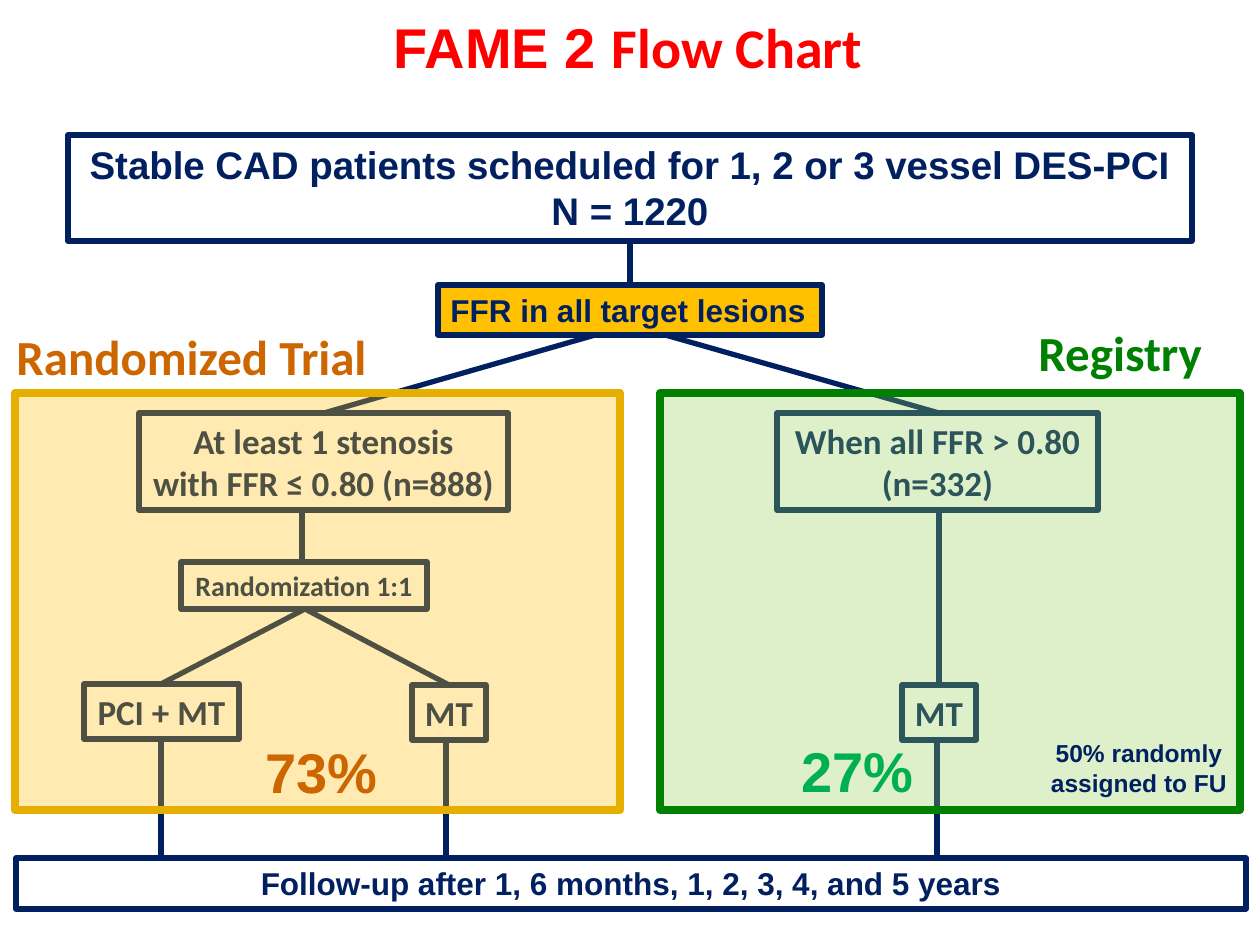
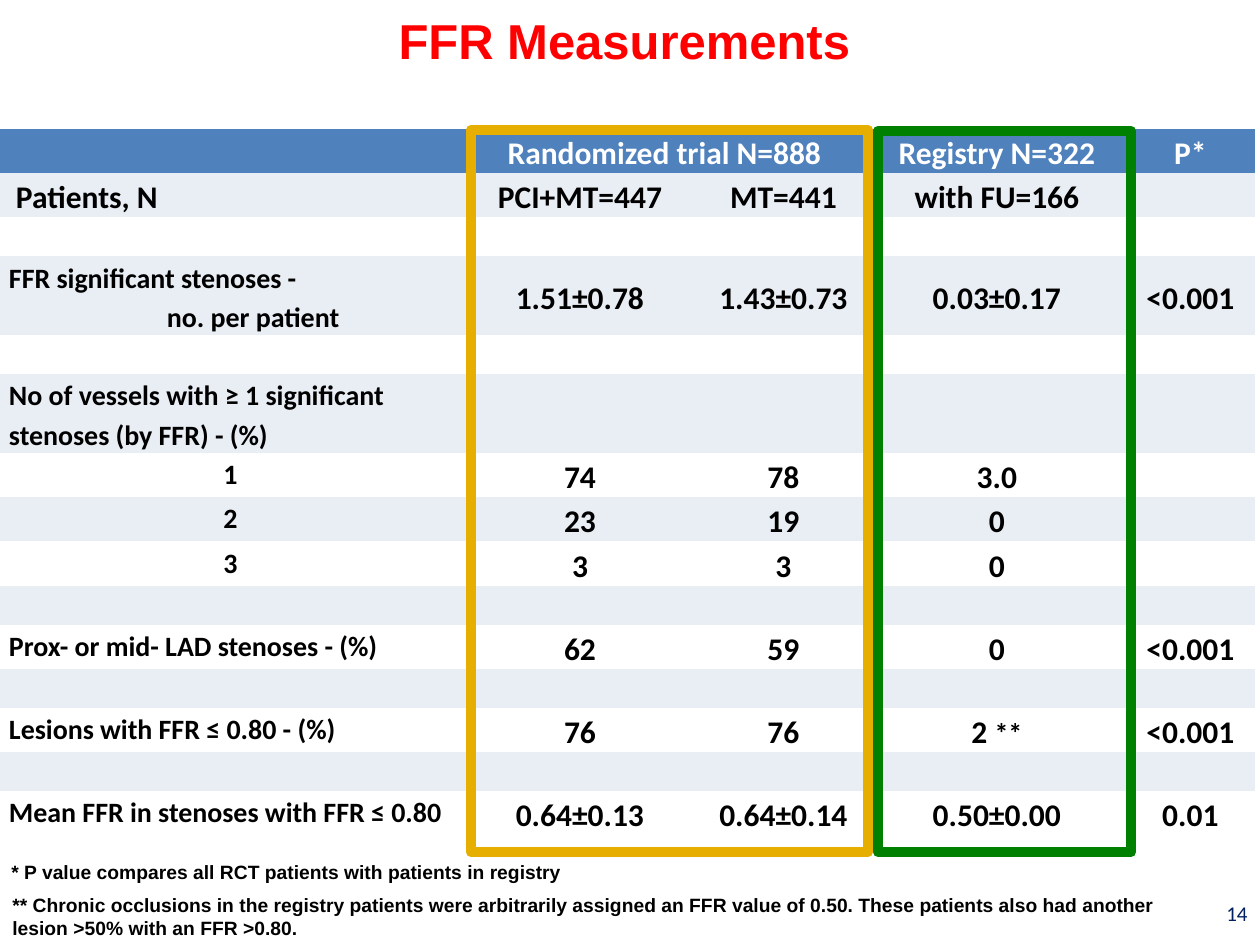
from lxml import etree
from pptx import Presentation
from pptx import util as u
from pptx.dml.color import RGBColor
from pptx.enum import shapes, text
from pptx.oxml.ns import qn

PX = 914400 / 126
NAVY = RGBColor(0x00, 0x20, 0x60)
RED = RGBColor(0xFF, 0x00, 0x00)
AMBER = RGBColor(0xFF, 0xC0, 0x00)
GOLD = RGBColor(0xE6, 0xAF, 0x00)
ORANGE = RGBColor(0xCC, 0x66, 0x00)
GREEN = RGBColor(0x00, 0x80, 0x00)
LIME = RGBColor(0x92, 0xD0, 0x50)
EMERALD = RGBColor(0x00, 0xB0, 0x50)
BLUE = RGBColor(0x4F, 0x81, 0xBD)
PALE = RGBColor(0xE9, 0xED, 0xF4)
WHITE = RGBColor(0xFF, 0xFF, 0xFF)
BLACK = RGBColor(0x00, 0x00, 0x00)
LEFT, CENTER, RIGHT = text.PP_ALIGN.LEFT, text.PP_ALIGN.CENTER, text.PP_ALIGN.RIGHT
TOP, MIDDLE = text.MSO_ANCHOR.TOP, text.MSO_ANCHOR.MIDDLE


def write(frame, words, size=18, color=NAVY, font="Arial", bold=True, align=LEFT, spacing=1.0):
    for number, line in enumerate(words.split("\n")):
        para = frame.add_paragraph() if number else frame.paragraphs[0]
        para.alignment = align
        para.line_spacing = spacing
        span = para.add_run()
        span.text = line
        span.font.name = font
        span.font.size = u.Pt(size)
        span.font.bold = bold
        span.font.color.rgb = color
    return para


def add_box(page, at, words="", line=None, weight=3, fill=None, opacity=None,
            wrap=False, anchor=TOP, **style):
    place = [round(value * PX) for value in at]
    if line is None:
        box = page.shapes.add_textbox(*place)
    else:
        box = page.shapes.add_shape(shapes.MSO_SHAPE.RECTANGLE, *place)
        box.shadow.inherit = False
        box.line.color.rgb = line
        box.line.width = u.Pt(weight)
        if fill is None:
            box.fill.background()
        else:
            box.fill.solid()
            box.fill.fore_color.rgb = fill
        if opacity:
            color = box.fill._xPr.find(qn("a:solidFill"))[0]
            etree.SubElement(color, qn("a:alpha")).set("val", str(opacity * 1000))
    if words:
        box.text_frame.word_wrap = wrap
        box.text_frame.vertical_anchor = anchor
        write(box.text_frame, words, **style)


deck = Presentation()
deck.slide_width = round(1260 * PX)
deck.slide_height = round(945 * PX)

pages = []
titles = [
    ("FAME 2 ", 32, (381, 6, 499, 81)),
    ("FFR Measurements", 28, (386, 4, 483, 72)),
]
for words, size, at in titles:
    page = deck.slides.add_slide(deck.slide_layouts[5])
    title = page.shapes.title
    title.left, title.top, title.width, title.height = [round(value * PX) for value in at]
    title.text_frame.word_wrap = False
    title.text_frame.vertical_anchor = TOP
    write(title.text_frame, words, size=size, color=RED)
    pages.append(page)
chart_page, table_page = pages

span = chart_page.shapes.title.text_frame.paragraphs[0].add_run()
span.text = "Flow Chart"
span.font.name = "Calibri"
span.font.size = u.Pt(32)
span.font.bold = True
span.font.color.rgb = RED

flow_lines = [
    (630, 241, 630, 285),
    (630, 325, 939, 413),
    (939, 510, 939, 685),
    (630, 325, 324, 413),
    (302, 512, 302, 562),
    (305, 609, 161, 684),
    (305, 609, 449, 685),
    (161, 738, 161, 858),
    (446, 738, 446, 856),
    (937, 738, 937, 856),
]
for ends in flow_lines:
    link = chart_page.shapes.add_connector(
        shapes.MSO_CONNECTOR.STRAIGHT, *[round(value * PX) for value in ends])
    link.line.color.rgb = NAVY
    link.line.width = u.Pt(3)
    etree.SubElement(link._element.spPr, qn("a:effectLst"))

steps = [
    ("When all FFR > 0.80\n(n=332)", 20, (777, 413, 321, 97)),
    ("MT", 20, (902, 685, 74, 55)),
    ("At least 1 stenosis\nwith FFR ≤ 0.80 (n=888)", 20, (139, 413, 369, 97)),
    ("Randomization 1:1", 16, (181, 562, 246, 47)),
    ("PCI + MT", 20, (84, 684, 155, 55)),
    ("MT", 20, (412, 685, 74, 55)),
]
for words, size, at in steps:
    add_box(chart_page, at, words, line=NAVY, size=size, font="Calibri", align=CENTER)

add_box(chart_page, (68, 135, 1124, 106),
        "Stable CAD patients scheduled for 1, 2 or 3 vessel DES-PCI\nN = 1220",
        line=NAVY, wrap=True, size=22, align=CENTER)
add_box(chart_page, (16, 858, 1230, 51), "Follow-up after 1, 6 months, 1, 2, 3, 4, and 5 years",
        line=NAVY, wrap=True, align=CENTER)
add_box(chart_page, (438, 285, 384, 50), "FFR in all target lesions", line=NAVY, fill=AMBER)

add_box(chart_page, (660, 393, 580, 417), line=GREEN, weight=4.5, fill=LIME, opacity=30)
add_box(chart_page, (15, 393, 605, 417), line=GOLD, weight=4.5, fill=AMBER, opacity=30)
add_box(chart_page, (1026, 316, 224, 72), "Registry", size=28, color=GREEN, font="Calibri")
add_box(chart_page, (4, 320, 391, 72), "Randomized Trial", size=28, color=ORANGE, font="Calibri")
add_box(chart_page, (789, 730, 139, 81), "27%", size=32, color=EMERALD)
add_box(chart_page, (253, 731, 139, 81), "73%", size=32, color=ORANGE)
add_box(chart_page, (1038, 732, 202, 72), "50% randomly\nassigned to FU", size=14, align=CENTER)

EMPTY = ("", "", "", "", "")
rows = [
    ("", "Randomized trial N=888", "", "Registry N=322", "P*"),
    ("Patients, N", "PCI+MT=447", "MT=441", "with FU=166", ""),
    EMPTY,
    ("FFR significant stenoses -\nno. per patient", "1.51±0.78", "1.43±0.73", "0.03±0.17", "<0.001"),
    EMPTY,
    ("No of vessels with ≥ 1 significant stenoses (by FFR) - (%)", "", "", "", ""),
    ("1", "74", "78", "3.0", ""),
    ("2", "23", "19", "0", ""),
    ("3", "3", "3", "0", ""),
    EMPTY,
    ("Prox- or mid- LAD stenoses - (%)", "62", "59", "0", "<0.001"),
    EMPTY,
    ("Lesions with FFR ≤ 0.80 - (%)", "76", "76", "2 ", "<0.001"),
    EMPTY,
    ("Mean FFR in stenoses with FFR ≤ 0.80", "0.64±0.13", "0.64±0.14", "0.50±0.00", "0.01"),
]
widths = (461, 238, 169, 258, 129)
tall_rows = (3, 5)
middle_rows = (0, 3)

frame = table_page.shapes.add_table(
    len(rows), len(widths), 0, round(129 * PX), round(sum(widths) * PX), round(700 * PX))
table = frame.table
table._tbl.tblPr.find(qn("a:tableStyleId")).text = "{2D5ABB26-0587-4C30-8999-92F81FD0307C}"
for column, width in zip(table.columns, widths):
    column.width = round(width * PX)
for r, row in enumerate(rows):
    height = 78 if r in tall_rows else 39 if row == EMPTY else 43
    table.rows[r].height = round(height * PX)
    for c, words in enumerate(row):
        cell = table.cell(r, c)
        cell.fill.solid()
        cell.fill.fore_color.rgb = BLUE if r == 0 else PALE if r % 2 else WHITE
        cell.margin_left = cell.margin_right = round(9 * PX)
        cell.margin_top = cell.margin_bottom = 0
        cell.vertical_anchor = MIDDLE if r in middle_rows and c else TOP
        if words:
            write(cell.text_frame, words, font="Calibri", spacing=1.15,
                  size=16 if c == 0 and r > 1 else 18,
                  color=BLACK if r else WHITE,
                  align=CENTER if c or words.isdigit() else LEFT)
table.cell(0, 1).merge(table.cell(0, 2))

indents = [(1, 0, 7), (3, 1, 158)]
for r, number, indent in indents:
    para = table.cell(r, 0).text_frame.paragraphs[number]
    para._p.get_or_add_pPr().set("marL", str(round(indent * PX)))

span = table.cell(12, 3).text_frame.paragraphs[0].add_run()
span.text = "**"
span.font.name = "Calibri"
span.font.size = u.Pt(16)
span.font.bold = True
span.font.color.rgb = BLACK

add_box(table_page, (966, 888, 294, 50), "14", wrap=True, anchor=MIDDLE,
        size=12, font="Calibri", bold=False, align=RIGHT)
add_box(table_page, (471, 130, 397, 722), line=GOLD, weight=6)
add_box(table_page, (878, 131, 253, 721), line=GREEN, weight=6)

footnotes = [
    ("* P value compares all RCT patients with patients in registry", (-1, 854, 780, 37)),
    ("** Chronic occlusions in the registry patients were arbitrarily assigned an FFR value of 0.50. "
     "These patients also had another lesion >50% with an FFR >0.80.", (0, 887, 1196, 58)),
]
for words, at in footnotes:
    add_box(table_page, at, words, wrap=True, size=11, color=BLACK)

deck.save("out.pptx")
